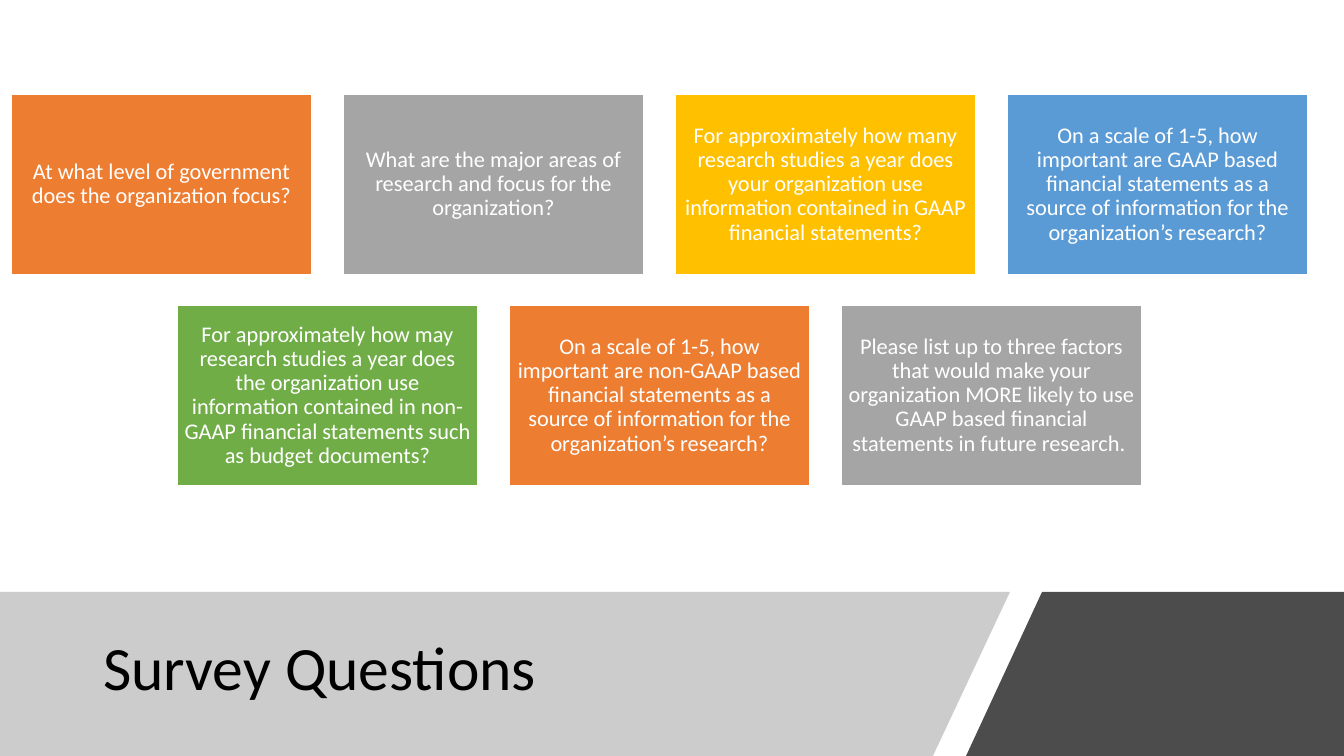
from dataclasses import dataclass

from lxml.etree import SubElement
from pptx import Presentation
from pptx.dml.color import RGBColor
from pptx.enum.shapes import MSO_SHAPE
from pptx.enum.text import MSO_ANCHOR, PP_ALIGN
from pptx.oxml.ns import qn
from pptx.shapes.autoshape import Shape
from pptx.shapes.shapetree import SlideShapes
from pptx.text.text import TextFrame
from pptx.util import Emu, Pt

EMU_PER_PX = 914400 / 100.8
SLIDE_WIDTH, SLIDE_HEIGHT = 1344, 756

WHITE = RGBColor(0xFF, 0xFF, 0xFF)
BLACK = RGBColor(0x00, 0x00, 0x00)
MID_GRAY = RGBColor(0x80, 0x80, 0x80)
ORANGE = RGBColor(0xED, 0x7D, 0x31)
GRAY = RGBColor(0xA5, 0xA5, 0xA5)
GOLD = RGBColor(0xFF, 0xC0, 0x00)
BLUE = RGBColor(0x5B, 0x9B, 0xD5)
GREEN = RGBColor(0x70, 0xAD, 0x47)
CARD_COLORS = (ORANGE, GRAY, GOLD, BLUE, GREEN)

CARD_WIDTH, CARD_HEIGHT = 301, 181
COLUMN_PITCH, ROW_PITCH = 332, 211
GRID_LEFT, GRID_TOP, COLUMNS = 11, 94, 4
CARD_INSET = 7
BAND_TOP = 592

QUESTIONS = (
    "At what level of government does the organization focus?",
    "What are the major areas of research and focus for the organization?",
    "For approximately how many research studies a year does your organization "
    "use information contained in GAAP financial statements?",
    "On a scale of 1-5, how important are GAAP based financial statements as a "
    "source of information for the organization’s research?",
    "For approximately how may research studies a year does the organization use "
    "information contained in non-GAAP financial statements such as budget documents?",
    "On a scale of 1-5, how important are non-GAAP based financial statements as a "
    "source of information for the organization’s research?",
    "Please list up to three factors that would make your organization MORE likely "
    "to use GAAP based financial statements in future research. ",
)


@dataclass(frozen=True)
class Band:
    corners: tuple[tuple[int, int], ...]
    color: RGBColor
    opacity: int


@dataclass(frozen=True)
class Card:
    question: str
    left: int
    top: int
    color: RGBColor


FOOTER_BAND = Band(
    ((0, BAND_TOP), (1010, BAND_TOP), (933, SLIDE_HEIGHT), (0, SLIDE_HEIGHT)),
    MID_GRAY, 40,
)
CORNER_BAND = Band(
    ((1042, BAND_TOP), (SLIDE_WIDTH, BAND_TOP),
     (SLIDE_WIDTH, SLIDE_HEIGHT), (966, SLIDE_HEIGHT)),
    BLACK, 70,
)


def px(length: int) -> Emu:
    return Emu(round(length * EMU_PER_PX))


def apply_format(target: object, values: dict[str, object]) -> None:
    for name, value in values.items():
        setattr(target, name, value)


def write_text(frame: TextFrame, text: str, size: int, color: RGBColor,
               paragraph_format: dict[str, object]) -> None:
    apply_format(frame, {"word_wrap": True, "vertical_anchor": MSO_ANCHOR.MIDDLE})
    paragraph = frame.paragraphs[0]
    apply_format(paragraph, {"line_spacing": 0.9, **paragraph_format})
    run = paragraph.add_run()
    run.text = text
    apply_format(run.font, {"name": "Calibri", "size": Pt(size)})
    run.font.color.rgb = color


def draw_band(shapes: SlideShapes, band: Band) -> Shape:
    start, *others = band.corners
    builder = shapes.build_freeform(*start, scale=EMU_PER_PX)
    builder.add_line_segments(others, close=True)
    outline = builder.convert_to_shape()
    outline.shadow.inherit = False
    outline.fill.solid()
    outline.fill.fore_color.rgb = band.color
    outline.line.fill.background()
    tint = outline.element.find(".//" + qn("a:srgbClr"))
    SubElement(tint, qn("a:alpha"), val=str(band.opacity * 1000))
    return outline


def draw_card(shapes: SlideShapes, card: Card) -> None:
    panel = shapes.add_shape(MSO_SHAPE.RECTANGLE, px(card.left), px(card.top),
                             px(CARD_WIDTH), px(CARD_HEIGHT))
    panel.shadow.inherit = False
    panel.fill.solid()
    panel.fill.fore_color.rgb = card.color
    panel.line.color.rgb = WHITE
    panel.line.width = Pt(1)
    sides = ("left", "top", "right", "bottom")
    apply_format(panel.text_frame,
                 {f"margin_{side}": px(CARD_INSET) for side in sides})
    write_text(panel.text_frame, card.question, 16, WHITE,
               {"alignment": PP_ALIGN.CENTER, "space_after": Pt(5.6)})


def arrange_cards() -> list[Card]:
    cards = []
    for index, question in enumerate(QUESTIONS):
        row, column = divmod(index, COLUMNS)
        row_length = min(COLUMNS, len(QUESTIONS) - row * COLUMNS)
        indent = (COLUMNS - row_length) * COLUMN_PITCH // 2
        cards.append(Card(question,
                          GRID_LEFT + indent + column * COLUMN_PITCH,
                          GRID_TOP + row * ROW_PITCH,
                          CARD_COLORS[index % len(CARD_COLORS)]))
    return cards


def main() -> None:
    deck = Presentation()
    apply_format(deck, {"slide_width": px(SLIDE_WIDTH),
                        "slide_height": px(SLIDE_HEIGHT)})
    slide = deck.slides.add_slide(deck.slide_layouts[5])
    slide.background.fill.solid()
    slide.background.fill.fore_color.rgb = WHITE

    heading = slide.shapes.title
    apply_format(heading, {"left": px(93), "top": px(610),
                           "width": px(851), "height": px(121)})
    write_text(heading.text_frame, "Survey Questions", 44, BLACK,
               {"alignment": PP_ALIGN.LEFT})

    footer = draw_band(slide.shapes, FOOTER_BAND)
    heading.element.addprevious(footer.element)
    draw_band(slide.shapes, CORNER_BAND)
    for card in arrange_cards():
        draw_card(slide.shapes, card)

    deck.save("out.pptx")


if __name__ == "__main__":
    main()
